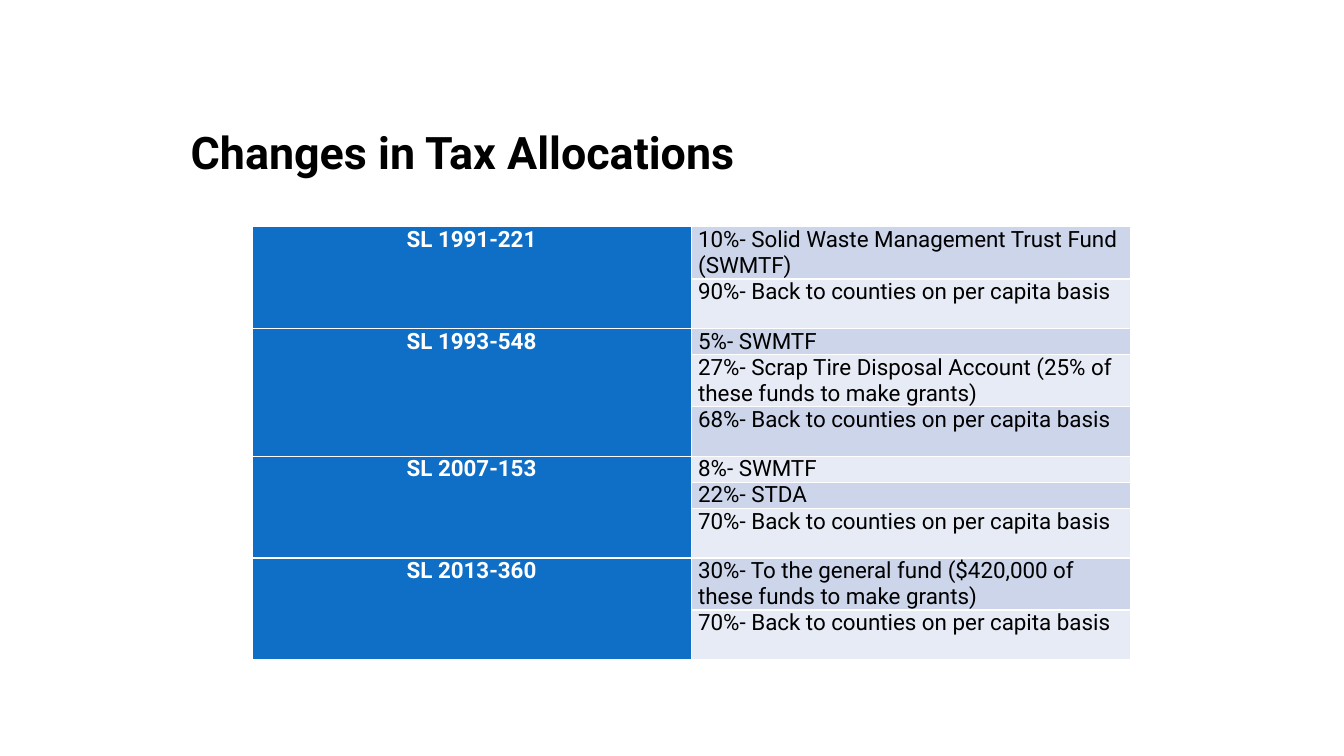
from dataclasses import dataclass

from lxml import etree
from pptx import Presentation
from pptx.dml.color import RGBColor
from pptx.enum.text import MSO_ANCHOR, PP_ALIGN
from pptx.oxml.ns import qn
from pptx.util import Inches, Pt

LEFT, CENTER = PP_ALIGN.LEFT, PP_ALIGN.CENTER
TOP, MIDDLE = MSO_ANCHOR.TOP, MSO_ANCHOR.MIDDLE
TITLE_ONLY_LAYOUT = 5


@dataclass(frozen=True)
class Theme:
    font: str = "Roboto"
    title_size: int = 32
    table_size: int = 16
    text: str = "000000"
    light_text: str = "FFFFFF"
    law_fill: str = "0F6FC6"
    bands: tuple = ("CCD5EA", "E7EBF5")
    border: str = "FFFFFF"
    border_width: int = 1


THEME = Theme()

# Box of each region: left, top, width, height in inches
TITLE_BOX = (1.79, 0.75, 9.75, 1.5)
TABLE_BOX = (2.5, 2.25, 8.71, 4.18)
CELL_MARGIN = 0.07

# Each session law with its shares; a share takes one or two grid lines
COUNTIES = "Back to counties on per capita basis"
ALLOCATIONS = [
    ("SL 1991-221", [("10%- Solid Waste Management Trust Fund (SWMTF)", 2),
                     (f"90%- {COUNTIES}", 2)]),
    ("SL 1993-548", [("5%- SWMTF", 1),
                     ("27%- Scrap Tire Disposal Account (25% of these funds to make grants)", 2),
                     (f"68%- {COUNTIES}", 2)]),
    ("SL 2007-153", [("8%- SWMTF", 1),
                     ("22%- STDA", 1),
                     (f"70%- {COUNTIES}", 2)]),
    ("SL 2013-360", [("30%- To the general fund ($420,000 of these funds to make grants)", 2),
                     (f"70%- {COUNTIES}", 2)]),
]


def write_text(frame, text, size, color=THEME.text, bold=False, align=LEFT):
    paragraph = frame.paragraphs[0]
    paragraph.alignment = align
    run = paragraph.add_run()
    run.text = text
    run.font.name = THEME.font
    run.font.size = Pt(size)
    run.font.bold = bold
    run.font.color.rgb = RGBColor.from_string(color)


def style_cell(cell, fill):
    """Set margins, thin borders and fill of one cell."""
    cell.margin_left = cell.margin_right = Inches(CELL_MARGIN)
    cell.margin_top = cell.margin_bottom = 0
    cell.vertical_anchor = TOP
    properties = cell._tc.get_or_add_tcPr()
    for side in ("a:lnL", "a:lnR", "a:lnT", "a:lnB"):
        line = etree.SubElement(properties, qn(side), w=str(Pt(THEME.border_width)))
        line_fill = etree.SubElement(line, qn("a:solidFill"))
        etree.SubElement(line_fill, qn("a:srgbClr"), val=THEME.border)
    cell.fill.solid()
    cell.fill.fore_color.rgb = RGBColor.from_string(fill)


def add_title(slide, box, text):
    title = slide.shapes.title
    title.left, title.top, title.width, title.height = map(Inches, box)
    title.text_frame.vertical_anchor = MIDDLE
    write_text(title.text_frame, text, THEME.title_size, bold=True)


def add_allocation_table(slide, box, allocations):
    left, top, width, height = map(Inches, box)
    shares = [share for _, group in allocations for share in group]
    line_height = height // sum(lines for _, lines in shares)
    table = slide.shapes.add_table(len(shares), 2, left, top, width, height).table
    table.first_row = table.horz_banding = False

    # Share column with alternating bands
    for index, (text, lines) in enumerate(shares):
        table.rows[index].height = line_height * lines
        law_cell, share_cell = table.cell(index, 0), table.cell(index, 1)
        style_cell(law_cell, THEME.law_fill)
        style_cell(share_cell, THEME.bands[index % 2])
        write_text(share_cell.text_frame, text, THEME.table_size)

    # Law column, merged over the shares of each law
    first = 0
    for law, group in allocations:
        law_cell = table.cell(first, 0)
        law_cell.merge(table.cell(first + len(group) - 1, 0))
        write_text(law_cell.text_frame, law, THEME.table_size,
                   color=THEME.light_text, bold=True, align=CENTER)
        first += len(group)


def main():
    presentation = Presentation()
    presentation.slide_width, presentation.slide_height = Inches(13.33), Inches(7.5)
    slide = presentation.slides.add_slide(presentation.slide_layouts[TITLE_ONLY_LAYOUT])
    add_title(slide, TITLE_BOX, "Changes in Tax Allocations")
    add_allocation_table(slide, TABLE_BOX, ALLOCATIONS)
    presentation.save("out.pptx")


if __name__ == "__main__":
    main()
